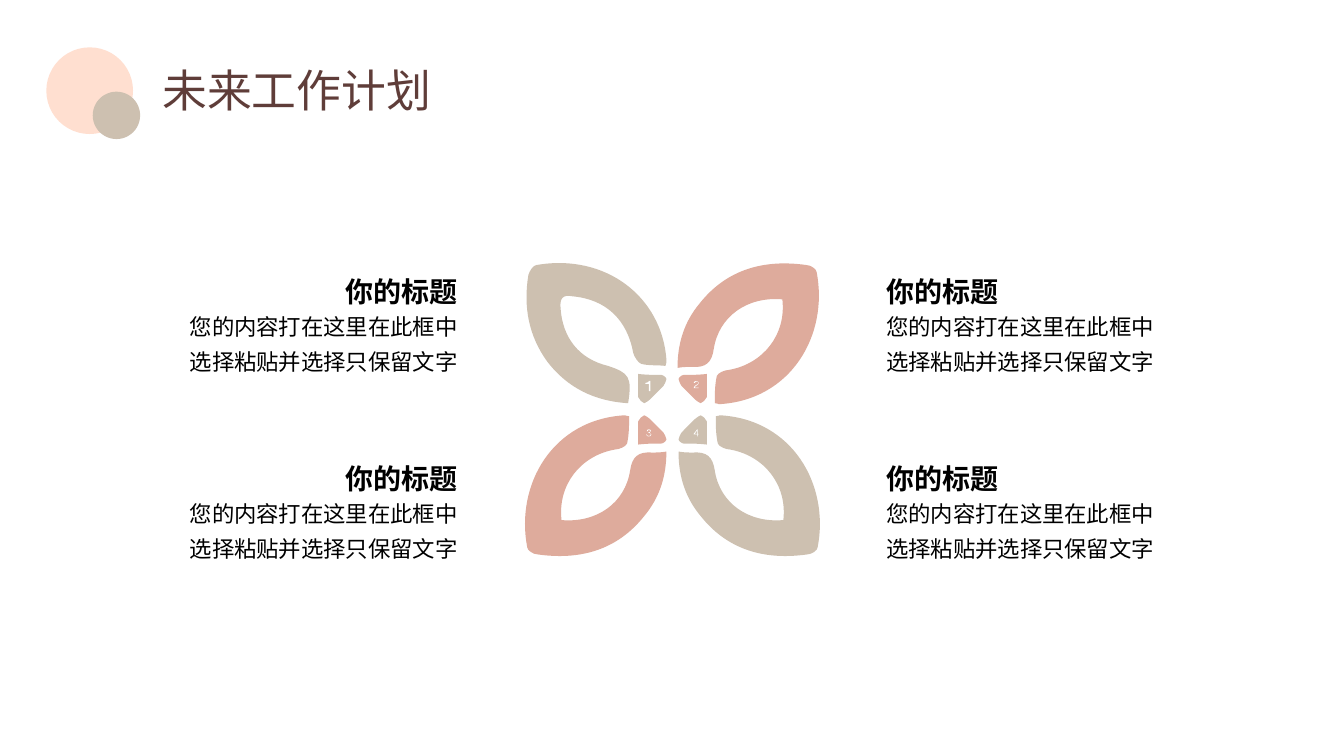
import lxml.etree
import pptx
import pptx.util
import pptx.dml.color
import pptx.enum.shapes
import pptx.enum.text
import pptx.oxml
import pptx.oxml.ns

Inches = pptx.util.Inches
Pt = pptx.util.Pt
RGBColor = pptx.dml.color.RGBColor
ALIGN = pptx.enum.text.PP_ALIGN
qn = pptx.oxml.ns.qn

PEACH = RGBColor(0xFF, 0xDF, 0xD0)
SAND = RGBColor(0xCD, 0xC0, 0xB0)
ROSE = RGBColor(0xDE, 0xAB, 0x9C)
BROWN = RGBColor(0x5F, 0x3D, 0x39)
BLACK = RGBColor(0x00, 0x00, 0x00)
WHITE = RGBColor(0xFF, 0xFF, 0xFF)
FONT = "Noto Sans CJK SC"

SHARP_PETAL = [("C" * 11, [
    (109, 109),
    (74, 112), (46, 92), (41, 60), (39, 46), (33, 41), (19, 42),
    (15, 42), (10, 42), (5, 41), (5, 66), (12, 87), (27, 105),
    (54, 139), (91, 149), (133, 143), (137, 143), (143, 139), (143, 136),
    (155, 74), (118, 9), (46, 5), (45, 5), (45, 6), (42, 6),
    (42, 15), (42, 24), (44, 33), (45, 36), (52, 39), (56, 39),
    (90, 45), (113, 74), (109, 109),
])]
ROUND_PETAL = [("C" * 11, [
    (7, 43),
    (15, 44), (23, 43), (31, 45), (34, 46), (38, 52), (39, 56),
    (45, 89), (66, 109), (99, 112), (109, 114), (112, 110), (111, 100),
    (109, 71), (93, 50), (64, 43), (43, 36), (40, 32), (44, 6),
    (77, 8), (104, 21), (124, 47), (143, 73), (148, 102), (143, 133),
    (142, 137), (138, 143), (135, 143), (67, 155), (10, 112), (6, 48),
    (6, 47), (6, 46), (7, 43),
])]
TIP = [("C" * 7, [
    (34, 35),
    (25, 34), (18, 34), (11, 34), (9, 34), (6, 31), (6, 30),
    (6, 28), (8, 25), (9, 23), (13, 19), (18, 14), (22, 10),
    (24, 9), (26, 6), (28, 6), (30, 7), (33, 9), (34, 12),
    (34, 19), (34, 26), (34, 35),
])]
ONE = [("LLLLLLC", [
    (4, 0), (5, 0), (5, 10), (3.5, 10), (3.5, 3), (0, 3), (0, 2),
    (2, 2), (3, 1), (4, 0),
])]
TWO = [("CCCCLLLCCCCCLC", [
    (2.5, 0), (4, 0), (5, 1), (5, 2), (5, 3), (4, 4), (3, 4.5),
    (2, 5), (2, 5), (2, 5), (1, 5.5), (1, 6), (1, 6.5),
    (5, 6.5), (5, 7), (0, 7), (0, 6), (0, 5.5), (1, 5),
    (1, 4.5), (2, 4), (2.5, 4), (4, 3.5), (4.5, 3), (4.5, 2),
    (4.5, 1), (4, 0.5), (2.5, 0.5), (1.5, 0.5), (1, 1), (1, 2),
    (0, 2), (0, 1), (1, 0), (2.5, 0),
])]
THREE = [("CCCCCLCCCLCCCLCC", [
    (2.5, 0), (4, 0), (4.5, 0.5), (4.5, 1.5), (4.5, 2.5), (4, 3), (3.5, 3.5),
    (4.5, 3.5), (5, 4), (5, 5), (5, 6.5), (4, 7), (2.5, 7),
    (1, 7), (0, 6.5), (0, 5), (0.5, 5), (0.5, 6), (1.5, 6.5), (2.5, 6.5),
    (3.5, 6.5), (4.5, 6), (4.5, 5), (4.5, 4), (3.5, 3.5), (2, 3.5),
    (2, 3), (3, 3), (4, 2.5), (4, 1.5), (4, 1), (3.5, 0.5), (2.5, 0.5),
    (1.5, 0.5), (1, 1), (1, 2), (0.5, 2), (0.5, 1), (0.5, 0.5), (1, 0.5),
    (1.5, 0), (2, 0), (2.5, 0),
])]
FOUR = [
    ("L" * 10, [
        (3.5, 0), (4, 0), (4, 4.5), (5, 4.5), (5, 5), (4, 5), (4, 7),
        (3.5, 7), (3.5, 5), (0, 5), (0, 4.5),
    ]),
    ("LLL", [(3.5, 1), (1, 4.5), (3.5, 4.5), (3.5, 1)]),
]
QUADRANTS = [
    (-1, -1, SAND, ROUND_PETAL, ONE, -0.27, -0.28),
    (1, -1, ROSE, SHARP_PETAL, TWO, 0.21, -0.28),
    (-1, 1, ROSE, SHARP_PETAL, THREE, -0.26, 0.2),
    (1, 1, SAND, SHARP_PETAL, FOUR, 0.21, 0.2),
]
HEADING = "你的标题"
BODY = "您的内容打在这里在此框中选择粘贴并选择只保留文字"


def paint(shape, color):
    """Give a shape a plain fill without line or shadow."""
    shape.shadow.inherit = False
    shape.fill.solid()
    shape.fill.fore_color.rgb = color
    shape.line.fill.background()


def write(frame, text, size, color, align, spacing, bold=False):
    """Put one formatted paragraph into a text frame."""
    frame.word_wrap = True
    frame.auto_size = pptx.enum.text.MSO_AUTO_SIZE.NONE
    frame.text = text
    paragraph = frame.paragraphs[0]
    paragraph.alignment = align
    paragraph.line_spacing = spacing
    font = paragraph.runs[0].font
    font.name, font.size, font.bold = FONT, Pt(size), bold
    font.color.rgb = color
    latin = paragraph.runs[0]._r.get_or_add_rPr().find(qn("a:latin"))
    east_asian = lxml.etree.Element(qn("a:ea"), typeface=FONT)
    latin.addnext(east_asian)


def bend(shape, kinds):
    """Turn each run of three segments marked C into one cubic curve."""
    segments = iter(list(shape._element.iter(qn("a:lnTo"))))
    for kind in kinds:
        segment = next(segments)
        if kind == "C":
            curve = lxml.etree.Element(qn("a:cubicBezTo"))
            segment.addprevious(curve)
            for part in (segment, next(segments), next(segments)):
                curve.append(part[0])
                part.getparent().remove(part)


def add_outline(slide, contours, left, top, color, side=1, level=1):
    """Draw contours in hundredths of an inch, mirrored by side and level."""
    placed = [[(Inches(left + side * u / 100), Inches(top + level * v / 100))
               for u, v in points] for _, points in contours]
    builder = slide.shapes.build_freeform(*placed[0][0], scale=1.0)
    builder.add_line_segments(placed[0][1:], close=True)
    for points in placed[1:]:
        builder.move_to(*points[0])
        builder.add_line_segments(points[1:], close=True)
    outline = builder.convert_to_shape()
    bend(outline, "".join(kinds for kinds, _ in contours))
    paint(outline, color)


def add_header(slide, left, top, width, height):
    """Place the two circles and the slide title."""
    for dx, dy, diameter, color in ((0, 0, 0.86, PEACH), (0.46, 0.44, 0.47, SAND)):
        circle = slide.shapes.add_shape(
            pptx.enum.shapes.MSO_SHAPE.OVAL, Inches(left + dx), Inches(top + dy),
            Inches(diameter), Inches(diameter))
        paint(circle, color)
    title = slide.shapes.title
    title.left, title.top = Inches(left + 1.05), Inches(top + 0.07)
    title.width, title.height = Inches(width - 1.05), Inches(height)
    write(title.text_frame, "未来工作计划", 32, BROWN, ALIGN.LEFT, 0.9)
    title.text_frame.vertical_anchor = pptx.enum.text.MSO_ANCHOR.MIDDLE


def add_flower(slide, left, top, width, height):
    """Draw four petals with numbered tips around the middle of the box."""
    center_x, center_y = left + width / 2, top + height / 2
    for side, level, color, petal, numeral, dx, dy in QUADRANTS:
        spread = 0.01 if level > 0 else 0
        add_outline(slide, petal, center_x + side * spread, center_y + spread,
                    color, side, level)
        add_outline(slide, TIP, center_x, center_y, color, side, level)
        add_outline(slide, numeral, center_x + dx, center_y + dy, WHITE)


def add_plan(slide, left, top, width, align):
    """Place a heading above its body text."""
    heading_width = 1.83
    to_right = align == ALIGN.RIGHT
    indent = width - heading_width if to_right else 0
    heading = slide.shapes.add_textbox(
        Inches(left + indent), Inches(top), Inches(heading_width), Inches(0.56))
    write(heading.text_frame, HEADING, 20, BLACK, align, 1.5, bold=True)
    body = slide.shapes.add_textbox(
        Inches(left), Inches(top + 0.47), Inches(width), Inches(0.77))
    write(body.text_frame, BODY, 16, BLACK, align, 1.3)
    if to_right:
        body.text_frame.margin_left = Inches(0.2)
    else:
        body.text_frame.margin_right = Inches(0.2)


def main():
    """Build the slide and save it."""
    presentation = pptx.Presentation()
    presentation.slide_width, presentation.slide_height = Inches(13.33), Inches(7.5)
    slide = presentation.slides.add_slide(presentation.slide_layouts[5])
    add_header(slide, 0.46, 0.47, 12.55, 0.76)
    add_flower(slide, 5.22, 2.6, 2.9, 2.92)
    for top in (2.51, 4.36):
        add_plan(slide, 8.69, top, 3.08, ALIGN.LEFT)
        add_plan(slide, 1.56, top, 3.08, ALIGN.RIGHT)
    presentation.save("out.pptx")


if __name__ == "__main__":
    main()
